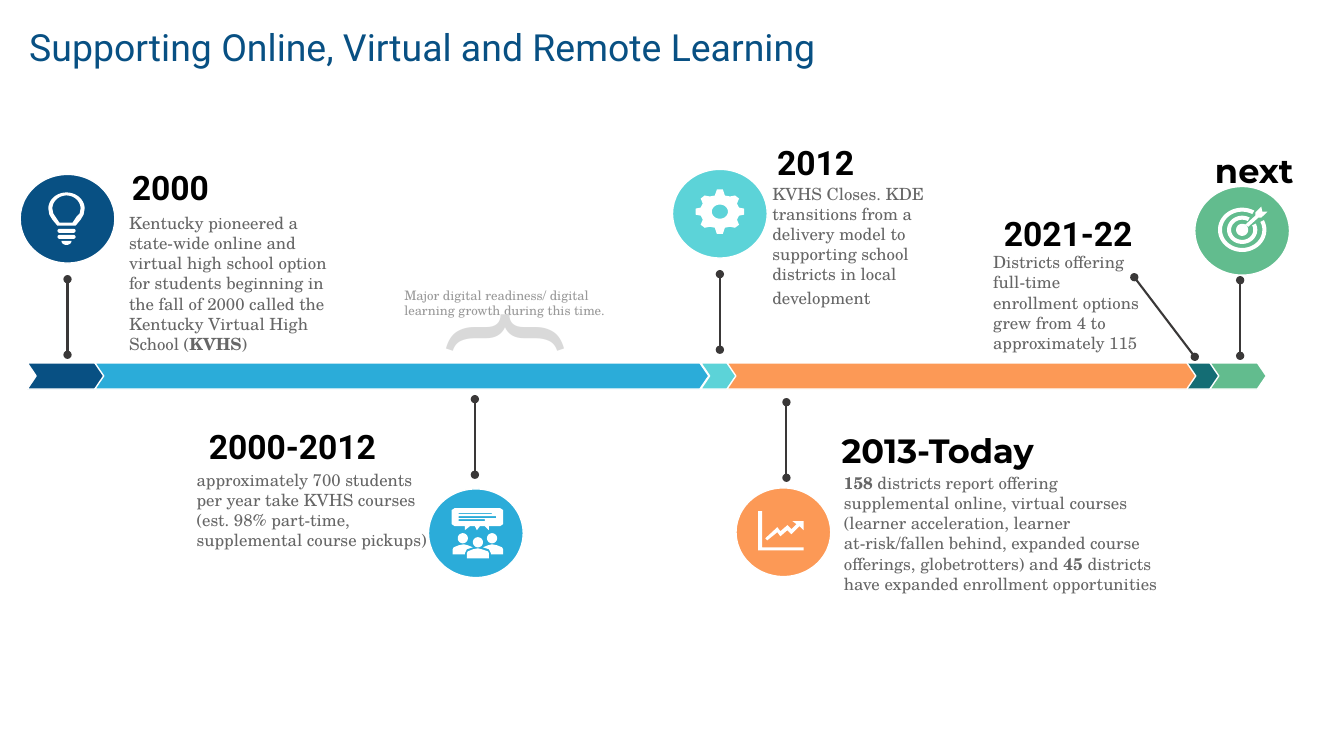
"""Builds a timeline slide on online, virtual and remote learning."""
import math
from lxml import etree
from pptx import Presentation
from pptx import util as u
from pptx.dml.color import RGBColor
from pptx.enum import shapes, text
from pptx.oxml.ns import qn

COLORS = dict(navy="085083", blue="2BACD9", aqua="5CD3D8", teal="146D74",
              green="62BC8E", orange="FC9956", white="FFFFFF", black="000000",
              body="666666", note="999999", brace="D9D9D9", pin="3A3838")
SERIF = "TeX Gyre Schola"

BARS = [(0.27, 0.78, "navy"), (0.94, 6.09, "blue"), (6.95, 0.39, "aqua"),
        (11.67, 0.44, "teal"), (12, 0.56, "green"), (7.21, 4.65, "orange")]

HEADINGS = [
    ("2000", (1, 1.59, 1.38, 0.44), "Roboto"),
    ("2000-2012", (1.79, 4.16, 2.22, 0.44), "Roboto"),
    ("2012", (7.4, 1.34, 1.38, 0.44), "Roboto"),
    ("2013-Today", (8, 4.2, 2.6, 0.3), "Montserrat"),
    ("2021-22", (9.67, 2.04, 1.85, 0.44), "Roboto"),
    ("next", (11.75, 1.42, 1.38, 0.5), "Montserrat"),
]

BODIES = [
    ((1.15, 2.04, 2.4, 1.56), [
        ("Kentucky pioneered a state-wide online and virtual high school option "
         "for students beginning in the fall of 2000 called the Kentucky Virtual "
         "High School (", {}), ("KVHS", {"bold": True}), (")", {})]),
    ((1.82, 4.59, 2.6, 1.36), [
        ("approximately 700 students per year take KVHS courses "
         "(est. 98% part-time, supplemental course pickups)", {})]),
    ((7.53, 1.75, 1.92, 1.7), [
        ("KVHS Closes. KDE transitions from a delivery model to supporting "
         "school districts in local development", {}), (" ", {"size": 14.7})]),
    ((8.24, 4.62, 3.41, 1.36), [
        ("158", {"bold": True}),
        (" districts report offering supplemental online, virtual courses "
         "(learner acceleration, learner at-risk/fallen behind, expanded course "
         "offerings, globetrotters) and ", {}), ("45 ", {"bold": True}),
        ("districts have expanded enrollment opportunities", {})]),
    ((9.72, 2.43, 1.75, 1.09), [
        ("Districts offering full-time enrollment options grew from 4 to "
         "approximately 115", {})]),
]

PINS = [(0.67, 3.52, 0.67, 2.77), (4.71, 4.71, 4.71, 3.96),
        (7.14, 3.47, 7.14, 2.72), (7.8, 4.74, 7.8, 3.99),
        (11.85, 3.54, 11.25, 2.75), (12.3, 3.53, 12.3, 2.78)]

DISCS = [(0.2, 1.73, "navy"), (4.25, 4.85, "blue"), (6.67, 1.68, "aqua"),
         (7.3, 4.84, "orange"), (11.85, 1.85, "green")]


def arc(cx, cy, rx, ry, start=0, end=360, steps=48):
    angles = [math.radians(start + (end - start) * i / steps) for i in range(steps + 1)]
    return [(cx + rx * math.cos(a), cy + ry * math.sin(a)) for a in angles]


def ring(cx, cy, rx, ry, thick):
    return (arc(cx, cy, rx, ry, -26, 300)
            + arc(cx, cy, rx - thick, ry - thick, 300, -26))


def box(x, y, w, h):
    return [(x, y), (x + w, y), (x + w, y + h), (x, y + h)]


def mirror(points, axis):
    return [(2 * axis - x, y) for x, y in points]


BULB = [arc(0.66, 2.07, 0.18, 0.16, 180, 360)
        + [(0.83, 2.13), (0.8, 2.18), (0.75, 2.24), (0.57, 2.24), (0.52, 2.18), (0.49, 2.13)],
        arc(0.66, 2.07, 0.14, 0.13, 180, 360)
        + [(0.79, 2.12), (0.76, 2.15), (0.72, 2.21), (0.59, 2.21), (0.55, 2.15), (0.53, 2.12)]]
BULB_BASE = [arc(0.66, 2.39, 0.05, 0.04, 0, 180)]

BUBBLE = [[(4.51, 5.04), (4.96, 5.04), (4.99, 5.06), (4.99, 5.2), (4.96, 5.22),
           (4.85, 5.22), (4.85, 5.26), (4.81, 5.22), (4.76, 5.22), (4.73, 5.26),
           (4.71, 5.22), (4.66, 5.22), (4.61, 5.26), (4.61, 5.22), (4.51, 5.22),
           (4.48, 5.2), (4.48, 5.06)],
          box(4.55, 5.09, 0.33, 0.01), box(4.55, 5.12, 0.37, 0.02), box(4.55, 5.15, 0.26, 0.02)]
SIDE_BODY = [(4.88, 5.4), (4.84, 5.41), (4.79, 5.43), (4.85, 5.45), (4.87, 5.49), (4.87, 5.5),
             (4.99, 5.5), (4.99, 5.45), (4.98, 5.43), (4.93, 5.41)]
MID_BODY = [(4.74, 5.44), (4.69, 5.45), (4.64, 5.47), (4.63, 5.49), (4.63, 5.54),
            (4.85, 5.54), (4.85, 5.49), (4.84, 5.47), (4.78, 5.45)]
PEOPLE = [SIDE_BODY, mirror(SIDE_BODY, 4.74), MID_BODY]
HEADS = [arc(x, y, 0.05, 0.05) for x, y in ((4.59, 5.34), (4.74, 5.38), (4.88, 5.34))]

TEETH = [(0.03, -0.22), (0.05, -0.16), (0.1, -0.15), (0.15, -0.16),
         (0.19, -0.13), (0.17, -0.08), (0.19, -0.04), (0.24, -0.03)]
HALF = TEETH + [(x, -y) for x, y in TEETH[::-1]]
GEAR = [[(7.14 + x, 2.1 + y) for x, y in HALF + [(-x, y) for x, y in HALF[::-1]]],
        arc(7.14, 2.1, 0.08, 0.07)]

AXES = [[(7.52, 5.07), (7.52, 5.46), (7.97, 5.46), (7.97, 5.43), (7.56, 5.43), (7.56, 5.07)]]
TREND = [[(7.86, 5.17), (7.9, 5.2), (7.85, 5.25), (7.81, 5.21), (7.74, 5.27), (7.71, 5.23),
          (7.59, 5.34), (7.61, 5.36), (7.71, 5.28), (7.74, 5.32), (7.81, 5.26), (7.85, 5.3),
          (7.93, 5.22), (7.97, 5.26), (7.97, 5.17)]]
TARGET = [ring(12.32, 2.28, 0.24, 0.22, 0.04), ring(12.32, 2.28, 0.15, 0.14, 0.04)]
BULLSEYE = [arc(12.32, 2.28, 0.06, 0.06)]
DART = [[(12.51, 2.05), (12.45, 2.11), (12.45, 2.14), (12.35, 2.23), (12.38, 2.25),
         (12.48, 2.16), (12.51, 2.16), (12.57, 2.1), (12.52, 2.1)]]
ICONS = [BULB, BULB_BASE, BUBBLE, PEOPLE, HEADS, GEAR, AXES, TREND, TARGET, BULLSEYE, DART]


def rgb(name):
    return RGBColor.from_string(COLORS[name])


def paint(sp, fill, line=None):
    sp.shadow.inherit = False
    sp.fill.solid()
    sp.fill.fore_color.rgb = rgb(fill)
    if line:
        sp.line.color.rgb = rgb(line)
        sp.line.width = u.Pt(1)
    else:
        sp.line.fill.background()


def add_preset(s, kind, at, fill, line=None, adj=None):
    sp = s.shapes.add_shape(kind, *map(u.Inches, at))
    if adj is not None:
        sp.adjustments[0] = adj
    paint(sp, fill, line)


def add_icon(s, contours):
    paths = [[(u.Inches(x), u.Inches(y)) for x, y in c] for c in contours]
    fb = s.shapes.build_freeform(*paths[0][0])
    for i, pts in enumerate(paths):
        if i:
            fb.move_to(*pts[0])
        fb.add_line_segments(pts[1:], close=True)
    paint(fb.convert_to_shape(), "white")


def add_pin(s, ends):
    c = s.shapes.add_connector(shapes.MSO_CONNECTOR.STRAIGHT, *map(u.Inches, ends))
    c.line.color.rgb = rgb("pin")
    c.line.width = u.Pt(1.5)
    ln = c.line._get_or_add_ln()
    for tag in ("a:headEnd", "a:tailEnd"):
        etree.SubElement(ln, qn(tag), type="oval")
    etree.SubElement(c._element.spPr, qn("a:effectLst"))


def add_text(s, at, runs, size=12, font=SERIF, color="body", bold=False,
             align=text.PP_ALIGN.LEFT, pad=0.07, rotation=0):
    sp = s.shapes.add_textbox(*map(u.Inches, at))
    sp.rotation = rotation
    tf = sp.text_frame
    tf.word_wrap = True
    tf.margin_left = tf.margin_right = u.Inches(0.13)
    tf.margin_top = tf.margin_bottom = u.Inches(pad)
    p = tf.paragraphs[0]
    p.alignment = align
    for words, fmt in runs:
        r = p.add_run()
        r.text = words
        r.font.name = font
        r.font.size = u.Pt(fmt.get("size", size))
        r.font.bold = fmt.get("bold", bold)
        r.font.color.rgb = rgb(color)


def main():
    prs = Presentation()
    prs.slide_width, prs.slide_height = u.Inches(13.33), u.Inches(7.5)
    s = prs.slides.add_slide(prs.slide_layouts[6])
    add_text(s, (0.16, 0.11, 8.75, 0.72), [("Supporting Online, Virtual and Remote Learning", {})],
             size=26.7, font="Roboto", color="navy", pad=0.13)
    for x, w, fill in BARS:
        add_preset(s, shapes.MSO_SHAPE.CHEVRON, (x, 3.6, w, 0.26), fill, "white", 0.34)
    for words, at, font in HEADINGS:
        add_text(s, at, [(words, {})], size=24, font=font, color="black", bold=True,
                 align=text.PP_ALIGN.CENTER)
    for at, runs in BODIES:
        add_text(s, at, runs)
    add_text(s, (3.88, 2.72, 2.6, 0.58),
             [("Major digital readiness/ digital learning growth during this time.", {})],
             size=9.3, color="note", pad=0.13)
    add_text(s, (4.57, 2.42, 0.67, 1.75), [("}", {})], size=88, font="Roboto",
             color="brace", pad=0.13, rotation=270)
    for ends in PINS:
        add_pin(s, ends)
    for x, y, fill in DISCS:
        add_preset(s, shapes.MSO_SHAPE.OVAL, (x, y, 0.94, 0.88), fill, "white")
    for contours in ICONS:
        add_icon(s, contours)
    for y in (2.27, 2.33):
        add_preset(s, shapes.MSO_SHAPE.ROUNDED_RECTANGLE, (0.57, y, 0.18, 0.04), "white", adj=0.5)
    prs.save("out.pptx")


if __name__ == "__main__":
    main()
